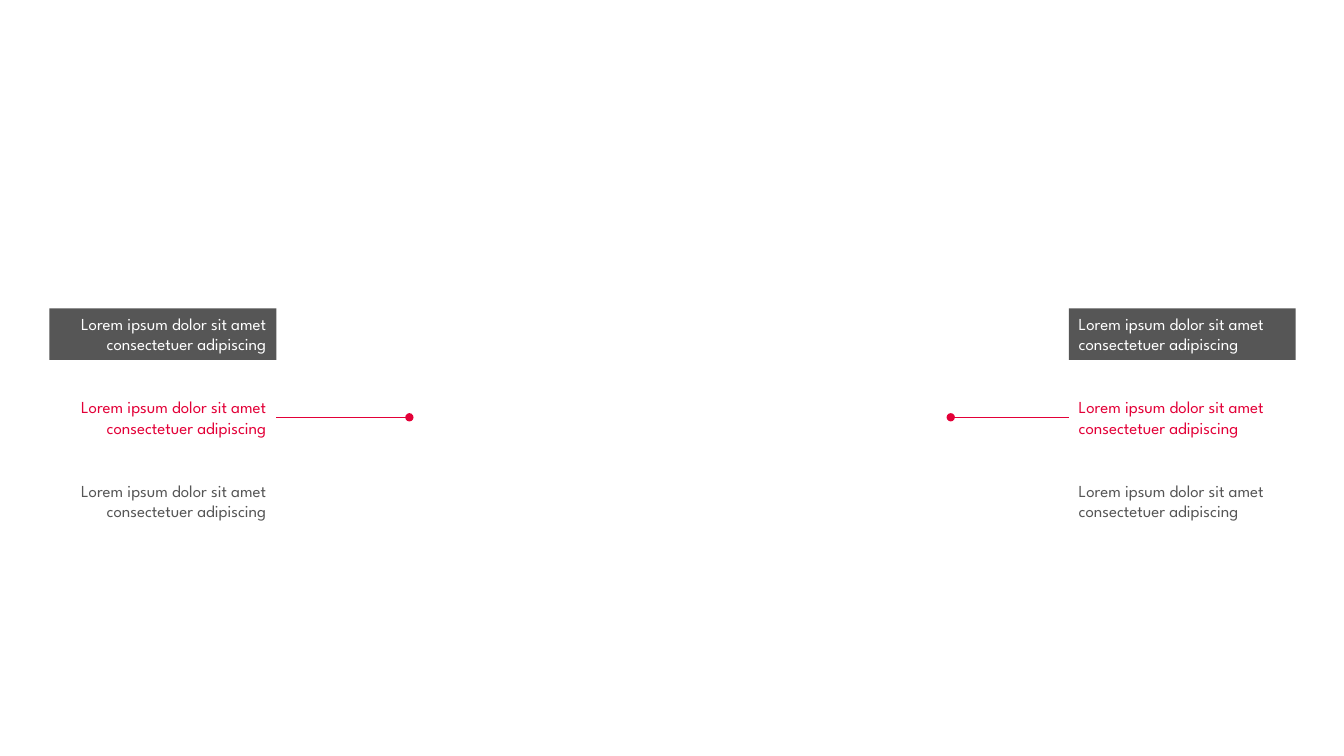
from lxml import etree
from pptx import Presentation
from pptx import util as u
from pptx.dml.color import RGBColor
from pptx.enum import shapes, text
from pptx.oxml import ns

GREY = RGBColor(0x56, 0x56, 0x56)
RED = RGBColor(0xE3, 0x00, 0x38)
WHITE = RGBColor(0xFF, 0xFF, 0xFF)
FONT = "League Spartan"
WORDS = "Lorem ipsum dolor sit amet consectetuer adipiscing"

# The slide is a grid of 100 columns by 100 rows.
COL, ROW = u.Inches(13.33) / 100, u.Inches(7.5) / 100
TOP, PITCH = 40.8, 11
WIDE, HIGH = 16.88, 6.8

# Fill, text colour and whether a lead line is drawn, from top to bottom.
STYLES = [(GREY, WHITE, False), (WHITE, RED, True), (WHITE, GREY, False)]


def set_all(thing, values):
    for name, value in values.items():
        setattr(thing, name, value)


def add_label(slide, left, top, fill, ink, align):
    box = slide.shapes.add_shape(
        shapes.MSO_SHAPE.RECTANGLE,
        *(round(n) for n in (left * COL, top * ROW, WIDE * COL, HIGH * ROW)))
    box.shadow.inherit = False
    box.fill.solid()
    box.fill.fore_color.rgb = fill
    box.line.fill.background()
    frame = box.text_frame
    set_all(frame, {
        "word_wrap": True,
        "auto_size": text.MSO_AUTO_SIZE.SHAPE_TO_FIT_TEXT,
        "vertical_anchor": text.MSO_ANCHOR.MIDDLE,
    })
    line = frame.paragraphs[0]
    line.alignment = align
    run = line.add_run()
    run.text = WORDS
    set_all(run.font, {"name": FONT, "size": u.Pt(12)})
    run.font.color.rgb = ink
    return box


def add_lead(slide, box, site, dot, color):
    """Draw a line from a side of the box to a round dot at column dot."""
    mid = box.top + box.height // 2
    lead = slide.shapes.add_connector(
        shapes.MSO_CONNECTOR.STRAIGHT, box.left, mid, round(dot * COL), mid)
    lead.begin_connect(box, site)
    lead.line.color.rgb = color
    lead.line.width = u.Pt(0.5)
    etree.SubElement(lead.line._ln, ns.qn("a:tailEnd"), type="oval")
    etree.SubElement(lead._element.spPr, ns.qn("a:effectLst"))


def add_side(slide, left, align, site, dot):
    """Stack the labels of one side, with leads from the inner edge."""
    for i, (fill, ink, led) in enumerate(STYLES):
        box = add_label(slide, left, TOP + i * PITCH, fill, ink, align)
        if led:
            add_lead(slide, box, site, dot, ink)


def main():
    deck = Presentation()
    set_all(deck, {"slide_width": round(100 * COL),
                   "slide_height": round(100 * ROW)})
    slide = deck.slides.add_slide(deck.slide_layouts[6])
    add_side(slide, 3.68, text.PP_ALIGN.RIGHT, 3, 30.46)
    add_side(slide, 79.52, text.PP_ALIGN.LEFT, 1, 70.74)
    deck.save("out.pptx")


if __name__ == "__main__":
    main()
